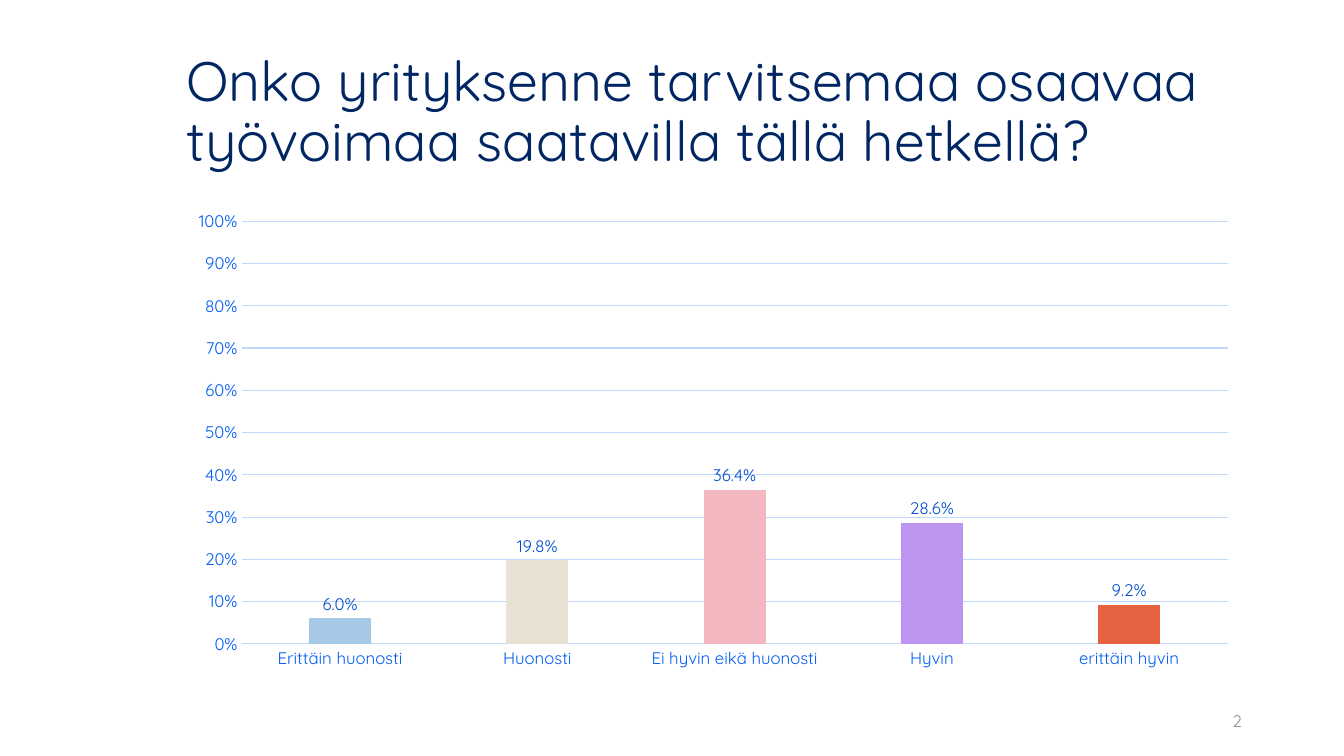
from dataclasses import dataclass

import pptx
import pptx.chart.data
import pptx.dml.color
import pptx.enum.chart
import pptx.enum.text
import pptx.oxml
import pptx.oxml.ns
import pptx.util

Pt = pptx.util.Pt
ALIGN = pptx.enum.text.PP_ALIGN
ANCHOR = pptx.enum.text.MSO_ANCHOR


@dataclass(frozen=True)
class Theme:
    font: str = "Quicksand"
    title: str = "002663"
    axis: str = "005DF3"
    label: str = "004DCA"
    grid: str = "C1D9FF"
    muted: str = "8C8E9F"
    head: float = 39.6
    body: float = 12
    base: float = 10
    rule: float = 0.75


@dataclass(frozen=True)
class Answer:
    name: str
    share: float
    color: str


THEME = Theme()
ANSWERS = [
    Answer("Erittäin huonosti", 0.06, "A5C9E7"),
    Answer("Huonosti", 0.198, "E8E2D5"),
    Answer("Ei hyvin eikä huonosti", 0.364, "F2B7BF"),
    Answer("Hyvin", 0.286, "BB95EF"),
    Answer("erittäin hyvin", 0.092, "E66342"),
]
PLOT = {"x": 0.061, "y": 0.041, "w": 0.924, "h": 0.881}
LEFT, WIDTH = Pt(126), Pt(762.5)


def rgb(color: str):
    return pptx.dml.color.RGBColor.from_string(color)


def style(font, size: float, color: str) -> None:
    font.name = THEME.font
    font.size = Pt(size)
    font.bold = False
    font.color.rgb = rgb(color)


def write(frame, text: str, *, size: float, color: str,
          align=ALIGN.LEFT, space: float = 1) -> None:
    frame.word_wrap = True
    frame.auto_size = pptx.enum.text.MSO_AUTO_SIZE.NONE
    frame.vertical_anchor = ANCHOR.MIDDLE
    para = frame.paragraphs[0]
    para.alignment = align
    para.line_spacing = space
    run = para.add_run()
    run.text = text
    style(run.font, size, color)


def rule(line) -> None:
    line.color.rgb = rgb(THEME.grid)
    line.width = Pt(THEME.rule)


def place(chart) -> None:
    """Fix the inner plot area as fractions of the chart frame."""
    qn = pptx.oxml.ns.qn
    area = chart._chartSpace.find(".//" + qn("c:plotArea"))
    for old in area.findall(qn("c:layout")):
        area.remove(old)
    modes = "".join(f'<c:{key}Mode val="edge"/>' for key in "xy")
    sizes = "".join(f'<c:{key} val="{val}"/>' for key, val in PLOT.items())
    area.insert(0, pptx.oxml.parse_xml(
        f'<c:layout {pptx.oxml.ns.nsdecls("c")}><c:manualLayout>'
        f'<c:layoutTarget val="inner"/>{modes}{sizes}'
        '</c:manualLayout></c:layout>'))


def draw(slide, answers: list[Answer]) -> None:
    kinds = pptx.enum.chart
    data = pptx.chart.data.CategoryChartData(number_format="0.0%")
    data.categories = [item.name for item in answers]
    data.add_series("Series 1", [item.share for item in answers])
    chart = slide.shapes.add_chart(
        kinds.XL_CHART_TYPE.COLUMN_CLUSTERED,
        LEFT, Pt(144), WIDTH, Pt(342.7), data).chart
    chart.has_title = False
    chart.has_legend = False
    style(chart.font, THEME.base, THEME.title)
    place(chart)

    cats, vals = chart.category_axis, chart.value_axis
    for axis in (cats, vals):
        axis.major_tick_mark = kinds.XL_TICK_MARK.NONE
        axis.minor_tick_mark = kinds.XL_TICK_MARK.NONE
        style(axis.tick_labels.font, THEME.body, THEME.axis)
    rule(cats.format.line)
    vals.format.line.fill.background()
    vals.minimum_scale, vals.maximum_scale, vals.major_unit = 0, 1, 0.1
    vals.tick_labels.number_format = "0%"
    vals.tick_labels.number_format_is_linked = False
    vals.has_major_gridlines = True
    rule(vals.major_gridlines.format.line)

    plot = chart.plots[0]
    plot.vary_by_categories = False
    plot.gap_width, plot.overlap = 219, -27
    bars = plot.series[0]
    bars.invert_if_negative = False
    for spot, item in enumerate(answers):
        fill = bars.points[spot].format.fill
        fill.solid()
        fill.fore_color.rgb = rgb(item.color)
    tags = bars.data_labels
    tags.show_value = True
    tags.number_format = "0.0%"
    tags.number_format_is_linked = False
    tags.position = kinds.XL_LABEL_POSITION.OUTSIDE_END
    style(tags.font, THEME.body, THEME.label)


def main() -> None:
    deck = pptx.Presentation()
    deck.slide_width, deck.slide_height = Pt(960), Pt(540)
    slide = deck.slides.add_slide(deck.slide_layouts[5])
    title = slide.shapes.title
    title.left, title.top, title.width, title.height = (
        LEFT, Pt(28.8), WIDTH, Pt(104.4))
    write(title.text_frame,
          "Onko yrityksenne tarvitsemaa osaavaa työvoimaa saatavilla tällä hetkellä?",
          size=THEME.head, color=THEME.title, space=0.9)
    draw(slide, ANSWERS)
    number = slide.shapes.add_textbox(Pt(678.2), Pt(500.4), Pt(216), Pt(28.8))
    write(number.text_frame, "2", size=THEME.body, color=THEME.muted,
          align=ALIGN.RIGHT)
    deck.save("out.pptx")


if __name__ == "__main__":
    main()
